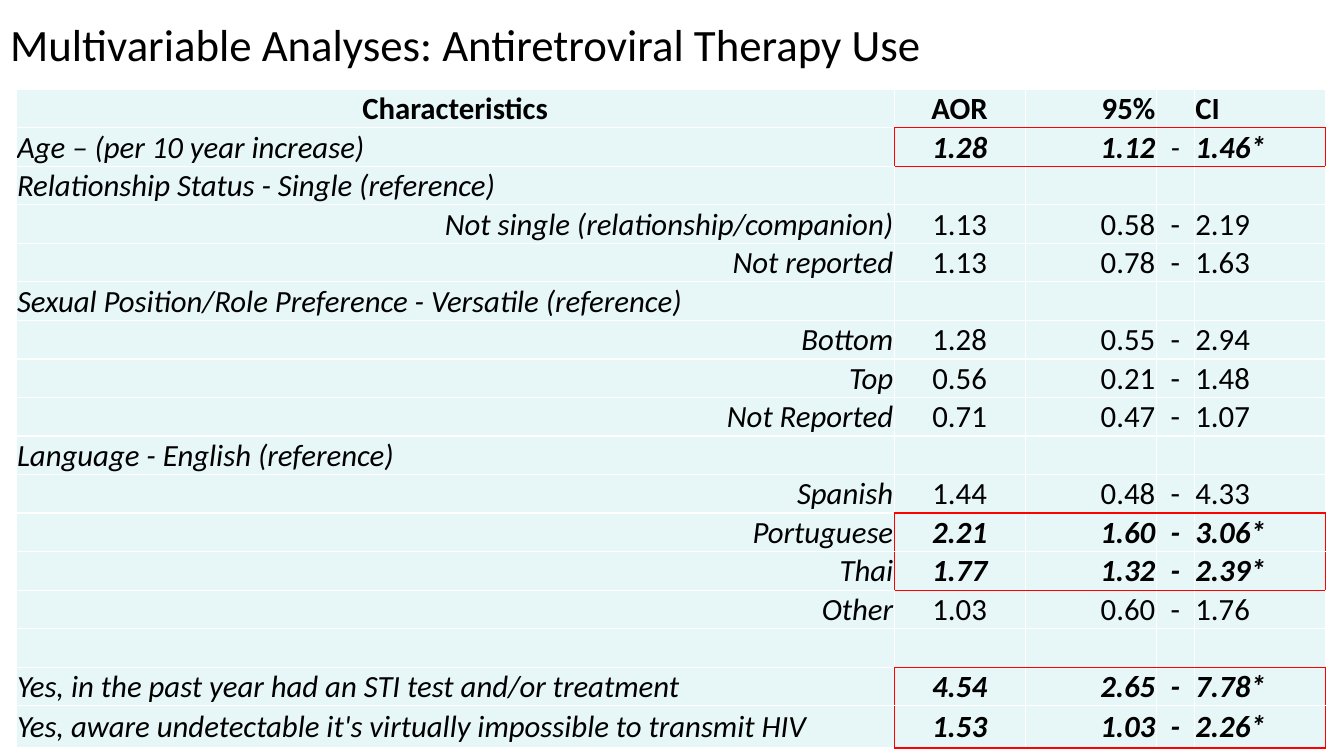
from lxml.etree import SubElement
from pptx import Presentation
from pptx.dml.color import RGBColor
from pptx.enum.text import MSO_ANCHOR, MSO_AUTO_SIZE, PP_ALIGN
from pptx.oxml.ns import qn
from pptx.util import Inches, Pt

BLACK = RGBColor(0x00, 0x00, 0x00)
WHITE = RGBColor(0xFF, 0xFF, 0xFF)
PALE_TEAL = RGBColor(0xE7, 0xF7, 0xF8)
RED = RGBColor(0xFF, 0x00, 0x00)

LEFT, CENTER, RIGHT = PP_ALIGN.LEFT, PP_ALIGN.CENTER, PP_ALIGN.RIGHT
VALUE_ALIGNS = (CENTER, RIGHT, CENTER, LEFT)

# Label, label alignment, odds ratio, interval bounds
HEADER = ("Characteristics", "AOR", "95%", "", "CI")
FACTORS = [
    ("Age – (per 10 year increase)", LEFT, "1.28", "1.12", "1.46*"),
    ("Relationship Status - Single (reference)", LEFT),
    ("Not single (relationship/companion)", RIGHT, "1.13", "0.58", "2.19"),
    ("Not reported", RIGHT, "1.13", "0.78", "1.63"),
    ("Sexual Position/Role Preference - Versatile (reference)", LEFT),
    ("Bottom", RIGHT, "1.28", "0.55", "2.94"),
    ("Top", RIGHT, "0.56", "0.21", "1.48"),
    ("Not Reported", RIGHT, "0.71", "0.47", "1.07"),
    ("Language - English (reference)", LEFT),
    ("Spanish", RIGHT, "1.44", "0.48", "4.33"),
    ("Portuguese", RIGHT, "2.21", "1.60", "3.06*"),
    ("Thai", RIGHT, "1.77", "1.32", "2.39*"),
    ("Other", RIGHT, "1.03", "0.60", "1.76"),
    ("", LEFT),
    ("Yes, in the past year had an STI test and/or treatment", LEFT,
     "4.54", "2.65", "7.78*"),
    ("Yes, aware undetectable it's virtually impossible to transmit HIV", LEFT,
     "1.53", "1.03", "2.26*"),
]
# First and last table row of each group of significant results
SIGNIFICANT = [(1, 1), (11, 12), (15, 16)]

# Sizes in hundredths of the slide's width and height
COLUMN_WIDTHS = (65.33, 9.75, 9.75, 2.85, 9.75)
ROW_HEIGHTS = [5.1] * len(FACTORS) + [5.6]


class Deck:
    font = "Calibri"
    title_size = Pt(32)
    table_size = Pt(22)

    def __init__(self):
        self.prs = Presentation()
        self.prs.slide_width, self.prs.slide_height = Inches(13.33), Inches(7.5)
        self.slide = self.prs.slides.add_slide(self.prs.slide_layouts[5])

    def cols(self, count):
        return round(self.prs.slide_width * count / 100)

    def rows(self, count):
        return round(self.prs.slide_height * count / 100)

    def add_text(self, paragraph, text, size, align, bold=False, italic=False):
        paragraph.alignment = align
        run = paragraph.add_run()
        run.text = text
        run.font.name, run.font.size = self.font, size
        run.font.bold, run.font.italic = bold, italic
        run.font.color.rgb = BLACK

    def title(self, text, width, height, space_below):
        heading = self.slide.shapes.title
        heading.left, heading.top = 0, 0
        heading.width, heading.height = self.cols(width), self.rows(height)
        frame = heading.text_frame
        frame.auto_size, frame.word_wrap = MSO_AUTO_SIZE.NONE, True
        frame.vertical_anchor = MSO_ANCHOR.BOTTOM
        frame.margin_bottom = self.rows(space_below)
        frame.paragraphs[0].line_spacing = 0.9
        self.add_text(frame.paragraphs[0], text, self.title_size, LEFT)

    def table(self, left, top, widths, heights):
        grid = self.slide.shapes.add_table(
            len(heights), len(widths), self.cols(left), self.rows(top),
            self.cols(sum(widths)), self.rows(sum(heights))).table
        for column, width in zip(grid.columns, widths):
            column.width = self.cols(width)
        for row, height in zip(grid.rows, heights):
            row.height = self.rows(height)
        return grid

    def cell(self, cell, text, align, borders, **style):
        cell.margin_left = cell.margin_right = cell.margin_top = Pt(0.7)
        cell.margin_bottom = 0
        cell.vertical_anchor = MSO_ANCHOR.MIDDLE
        if text:
            self.add_text(cell.text_frame.paragraphs[0], text, self.table_size,
                          align, **style)
        properties = cell._tc.get_or_add_tcPr()
        for side, color in borders.items():
            line = SubElement(properties, qn(f"a:ln{side}"), w=str(Pt(1)))
            fill = SubElement(line, qn("a:solidFill"))
            SubElement(fill, qn("a:srgbClr"), val=str(color))
        cell.fill.solid()
        cell.fill.fore_color.rgb = PALE_TEAL


def cell_borders(row, column):
    """Red around the significant value cells, white elsewhere."""
    sides = dict.fromkeys("LRTB", WHITE)
    for first, last in SIGNIFICANT:
        inside = first <= row <= last
        if column > 0:
            if row in (first, last + 1):
                sides["T"] = RED
            if row in (first - 1, last):
                sides["B"] = RED
        if inside and column == 1:
            sides["L"] = RED
        if inside and column in (0, len(HEADER) - 1):
            sides["R"] = RED
    return sides


def main():
    deck = Deck()
    deck.title("Multivariable Analyses: Antiretroviral Therapy Use",
               width=78.75, height=16.67, space_below=7.2)
    results = deck.table(1.2, 11.8, COLUMN_WIDTHS, ROW_HEIGHTS)

    # Header row
    for column, text in enumerate(HEADER):
        align = (CENTER, *VALUE_ALIGNS)[column]
        deck.cell(results.cell(0, column), text, align,
                  cell_borders(0, column), bold=True)

    # Factor rows
    for row, (label, label_align, *numbers) in enumerate(FACTORS, start=1):
        deck.cell(results.cell(row, 0), label, label_align,
                  cell_borders(row, 0), italic=True)
        ratio, low, high = numbers or ("", "", "")
        values = (ratio, low, "-" if numbers else "", high)
        starred = high.endswith("*")
        for column, (text, align) in enumerate(zip(values, VALUE_ALIGNS), start=1):
            bold = starred and not (row == 1 and text == "-")
            deck.cell(results.cell(row, column), text, align,
                      cell_borders(row, column), bold=bold, italic=starred)

    deck.prs.save("out.pptx")


if __name__ == "__main__":
    main()
